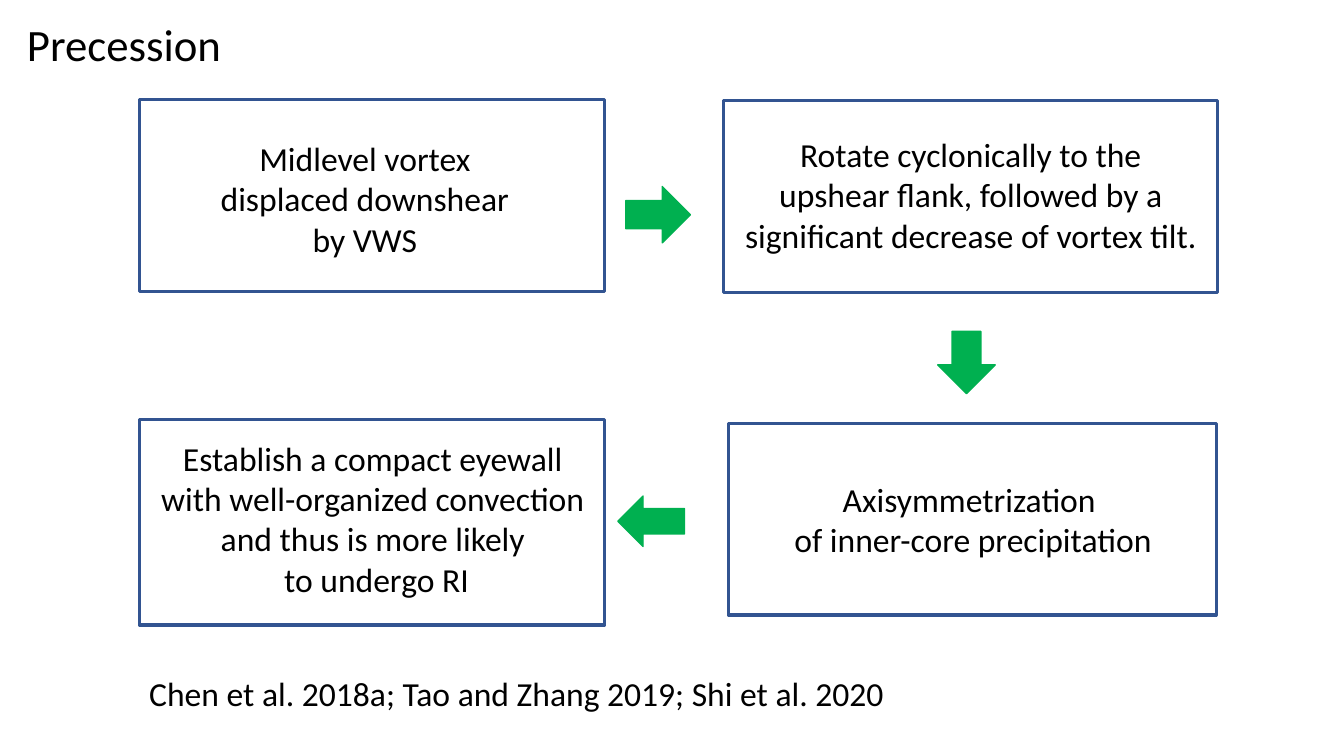
from typing import NamedTuple

from pptx import Presentation
from pptx.dml.color import RGBColor
from pptx.enum.shapes import MSO_SHAPE
from pptx.enum.text import PP_ALIGN
from pptx.slide import Slide
from pptx.util import Cm, Pt

COLORS = {"text": "000000", "outline": "325491", "arrow": "00B050"}
FONT = "Calibri"


class Area(NamedTuple):
    """Position and size in centimetres."""
    left: float
    top: float
    width: float
    height: float

    def lengths(self) -> list[Cm]:
        return [Cm(value) for value in self]


class Step(NamedTuple):
    box: Area
    label: Area
    lines: list[str]


class Arrow(NamedTuple):
    area: Area
    rotation: int


STEPS = [
    Step(Area(3.51, 2.51, 11.73, 4.83), Area(4.85, 3.35, 8.69, 3.33),
         ["Midlevel vortex displaced downshear by VWS"]),
    Step(Area(18.24, 2.54, 12.45, 4.83), Area(18.52, 3.25, 11.89, 3.33),
         ["Rotate cyclonically to the upshear flank, followed by a "
          "significant decrease of vortex tilt."]),
    Step(Area(18.36, 10.67, 12.29, 4.83), Area(16.05, 11.94, 16.94, 2.31),
         ["Axisymmetrization ", "of inner-core precipitation"]),
    Step(Area(3.51, 10.57, 11.73, 5.18), Area(1.02, 10.9, 16.94, 4.37),
         ["Establish a compact eyewall ", "with well-organized convection ",
          "and thus is more likely ", "to undergo RI"]),
]

ARROWS = [
    Arrow(Area(15.77, 4.7, 1.63, 1.42), 0),
    Arrow(Area(23.57, 8.41, 1.57, 1.45), 90),
    Arrow(Area(15.57, 12.5, 1.68, 1.27), 180),
]


def color(name: str) -> RGBColor:
    return RGBColor.from_string(COLORS[name])


def add_text(slide: Slide, area: Area, lines: list[str], *, size: int = 24,
             align: PP_ALIGN = PP_ALIGN.LEFT, wrap: bool = True) -> None:
    frame = slide.shapes.add_textbox(*area.lengths()).text_frame
    frame.word_wrap = wrap
    frame.text = "\n".join(lines)
    for paragraph in frame.paragraphs:
        paragraph.alignment = align
        font = paragraph.runs[0].font
        font.name, font.size = FONT, Pt(size)
        font.color.rgb = color("text")


def add_step(slide: Slide, step: Step) -> None:
    shape = slide.shapes.add_shape(MSO_SHAPE.RECTANGLE, *step.box.lengths())
    shape.shadow.inherit = False
    shape.fill.background()
    shape.line.color.rgb = color("outline")
    shape.line.width = Pt(2.25)
    add_text(slide, step.label, step.lines, align=PP_ALIGN.CENTER)


def add_arrow(slide: Slide, arrow: Arrow) -> None:
    shape = slide.shapes.add_shape(MSO_SHAPE.RIGHT_ARROW, *arrow.area.lengths())
    shape.shadow.inherit = False
    shape.rotation = arrow.rotation
    shape.fill.solid()
    shape.fill.fore_color.rgb = color("arrow")
    shape.line.color.rgb = color("arrow")
    shape.line.width = Pt(1)


def main() -> None:
    presentation = Presentation()
    presentation.slide_width, presentation.slide_height = Cm(33.87), Cm(19.05)
    slide = presentation.slides.add_slide(presentation.slide_layouts[6])

    # Title
    add_text(slide, Area(0.43, 0.3, 30.71, 2.64), ["Precession"], size=32,
             align=PP_ALIGN.JUSTIFY)

    # Process steps and the arrows between them
    for step in STEPS:
        add_step(slide, step)
    for arrow in ARROWS:
        add_arrow(slide, arrow)

    # References
    add_text(slide, Area(3.51, 16.84, 19.69, 1.27),
             ["Chen et al. 2018a; Tao and Zhang 2019; Shi et al. 2020"], wrap=False)

    presentation.save("out.pptx")


if __name__ == "__main__":
    main()
